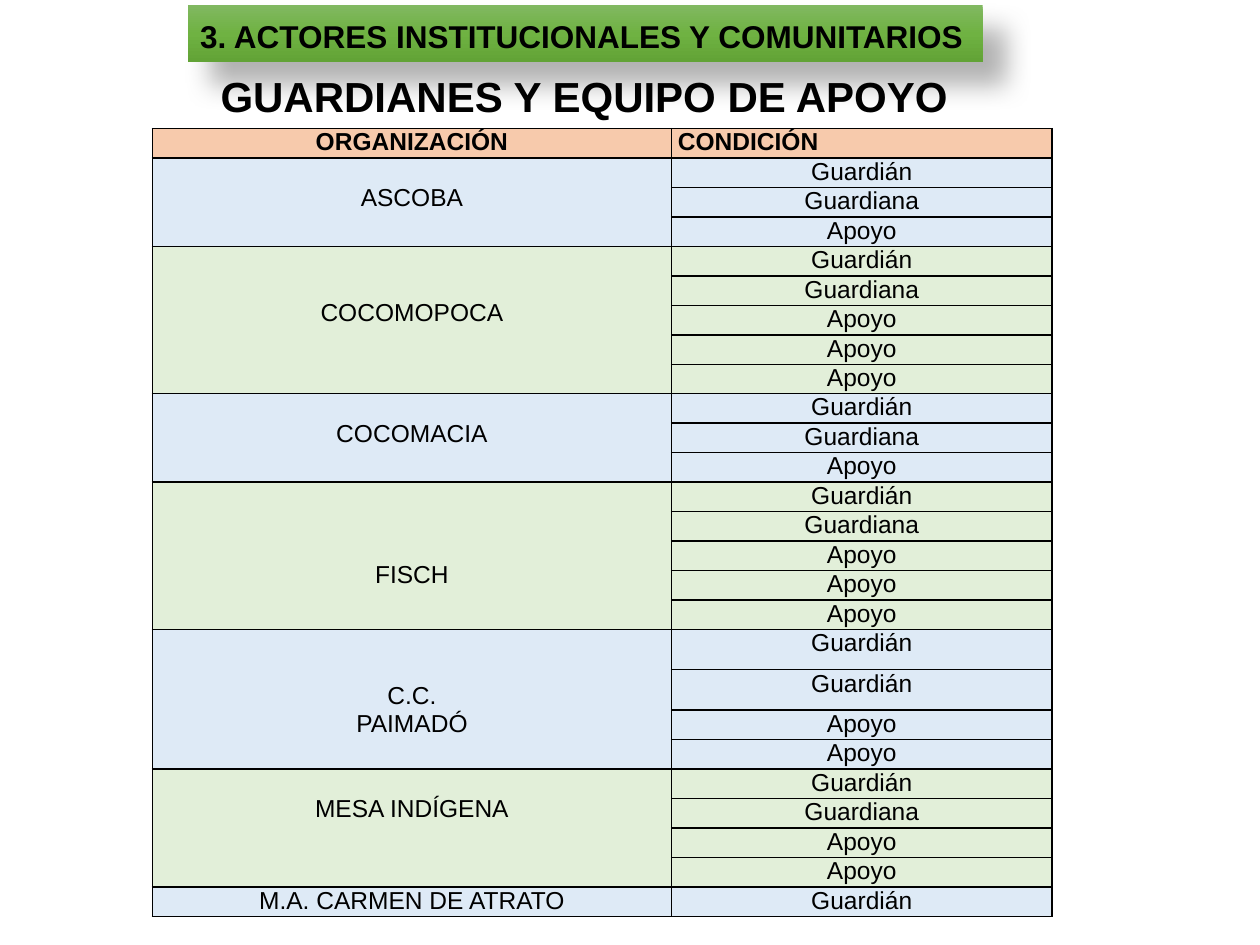
import copy
from dataclasses import dataclass

import pptx
import pptx.dml.color
import pptx.enum.shapes
import pptx.enum.text
import pptx.oxml
import pptx.oxml.ns
import pptx.util
from pptx.util import Inches

ALIGN = pptx.enum.text.PP_ALIGN
ANCHOR = pptx.enum.text.MSO_ANCHOR
NAMESPACE = pptx.oxml.ns.nsdecls("a")


@dataclass(frozen=True)
class Theme:
    font: str = "Arial"
    ink: str = "000000"
    header: str = "F7CAAC"
    bands: tuple[str, str] = ("DEEAF6", "E2EFD9")
    banner: tuple[str, str, str] = ("81B861", "6FB242", "62A336")
    banner_size: int = 18
    title_size: int = 24
    table_size: int = 14
    border_width: int = 1


@dataclass(frozen=True)
class Organization:
    name: str
    roles: tuple[str, ...]
    lines_above: int = 0


THEME = Theme()
TRIO = ("Guardián", "Guardiana", "Apoyo")
ORGANIZATIONS = (
    Organization("ASCOBA", TRIO, 1),
    Organization("COCOMOPOCA", TRIO + ("Apoyo",) * 2, 2),
    Organization("COCOMACIA", TRIO, 1),
    Organization("FISCH", TRIO + ("Apoyo",) * 2, 3),
    Organization("C.C.\nPAIMADÓ", ("Guardián",) * 2 + ("Apoyo",) * 2, 2),
    Organization("MESA INDÍGENA", TRIO + ("Apoyo",), 1),
    Organization("M.A. CARMEN DE ATRATO", ("Guardián",)),
)
TALL_ROWS = (17, 18)
TALL_HEIGHT = Inches(0.32)
TABLE_HEIGHT = Inches(6.23)
LINE_HEIGHT = 0.21


def color(value: str) -> pptx.dml.color.RGBColor:
    return pptx.dml.color.RGBColor.from_string(value)


def write(frame, text: str, size: int, bold: bool, align) -> None:
    frame.text = text
    for para in frame.paragraphs:
        para.alignment = align
        para.font.name = THEME.font
        para.font.size = pptx.util.Pt(size)
        para.font.bold = bold
        para.font.color.rgb = color(THEME.ink)


def add_banner(page, text: str) -> None:
    box = page.shapes.add_shape(
        pptx.enum.shapes.MSO_SHAPE.RECTANGLE,
        Inches(1.49), Inches(0.04), Inches(6.31), Inches(0.45))
    box.line.fill.background()

    # Three-stop vertical gradient
    box.fill.gradient()
    box.fill.gradient_angle = 270
    stop_list = box.fill._fill._gradFill.gsLst
    stop_list.append(copy.deepcopy(stop_list[0]))
    for index, stop in enumerate(box.fill.gradient_stops):
        stop.color.rgb = color(THEME.banner[index])
        stop.position = index / 2

    # Soft shadow toward the lower right
    box.shadow.inherit = False
    effects = box._element.spPr.find(pptx.oxml.ns.qn("a:effectLst"))
    effects.append(pptx.oxml.parse_xml(
        f'<a:outerShdw {NAMESPACE} blurRad="{pptx.util.Pt(15)}" '
        f'dist="{pptx.util.Pt(18)}" dir="2700000" algn="tl" rotWithShape="0">'
        f'<a:srgbClr val="{THEME.ink}"><a:alpha val="30000"/></a:srgbClr>'
        '</a:outerShdw>'))

    frame = box.text_frame
    frame.word_wrap = True
    frame.vertical_anchor = ANCHOR.MIDDLE
    write(frame, text, THEME.banner_size, True, ALIGN.JUSTIFY)
    frame.paragraphs[0].line_spacing = 1.15


def place_title(page, text: str) -> None:
    title = page.shapes.title
    title.left, title.top = Inches(1.65), Inches(0.51)
    title.width, title.height = Inches(6.03), Inches(0.5)
    frame = title.text_frame
    frame.word_wrap = False
    frame.auto_size = pptx.enum.text.MSO_AUTO_SIZE.SHAPE_TO_FIT_TEXT
    frame.vertical_anchor = ANCHOR.TOP
    write(frame, text, THEME.title_size, True, ALIGN.LEFT)


def style_cell(cell, fill: str) -> None:
    cell.margin_left = cell.margin_right = Inches(0.05)
    cell.margin_top = cell.margin_bottom = 0
    cell.vertical_anchor = ANCHOR.TOP
    properties = cell._tc.get_or_add_tcPr()
    for edge in ("lnL", "lnR", "lnT", "lnB"):
        properties.append(pptx.oxml.parse_xml(
            f'<a:{edge} {NAMESPACE} w="{pptx.util.Pt(THEME.border_width)}">'
            f'<a:solidFill><a:srgbClr val="{THEME.ink}"/></a:solidFill></a:{edge}>'))
    cell.fill.solid()
    cell.fill.fore_color.rgb = color(fill)


def fill_cell(cell, text: str, bold: bool = False, align=ALIGN.CENTER) -> None:
    write(cell.text_frame, text, THEME.table_size, bold, align)


def add_actor_table(page) -> None:
    row_count = 1 + sum(len(item.roles) for item in ORGANIZATIONS)
    table = page.shapes.add_table(
        row_count, 2, Inches(1.21), Inches(1.02), Inches(7.14), TABLE_HEIGHT).table
    table.first_row = table.horz_banding = False
    table.columns[0].width = Inches(4.12)
    table.columns[1].width = Inches(3.02)

    # Regular rows share what the tall rows leave
    regular = (TABLE_HEIGHT - len(TALL_ROWS) * TALL_HEIGHT) // (row_count - len(TALL_ROWS))
    for index, row in enumerate(table.rows):
        row.height = TALL_HEIGHT if index in TALL_ROWS else regular

    # Header
    for cell in table.rows[0].cells:
        style_cell(cell, THEME.header)
    fill_cell(table.cell(0, 0), "ORGANIZACIÓN", True)
    fill_cell(table.cell(0, 1), "CONDICIÓN", True, ALIGN.LEFT)

    # One band per organization
    first = 1
    for index, item in enumerate(ORGANIZATIONS):
        for row, role in enumerate(item.roles, first):
            for column in range(2):
                style_cell(table.cell(row, column), THEME.bands[index % 2])
            fill_cell(table.cell(row, 1), role)
        last = first + len(item.roles) - 1
        name_cell = table.cell(first, 0)
        if last > first:
            name_cell.merge(table.cell(last, 0))
        fill_cell(name_cell, item.name)
        name_cell.margin_top = Inches(item.lines_above * LINE_HEIGHT)
        first = last + 1


def main() -> None:
    deck = pptx.Presentation()
    deck.slide_width, deck.slide_height = Inches(10), Inches(7.5)
    page = deck.slides.add_slide(deck.slide_layouts.get_by_name("Title Only"))
    add_banner(page, "3. ACTORES INSTITUCIONALES Y COMUNITARIOS")
    place_title(page, "GUARDIANES Y EQUIPO DE APOYO")
    add_actor_table(page)
    deck.save("out.pptx")


if __name__ == "__main__":
    main()
